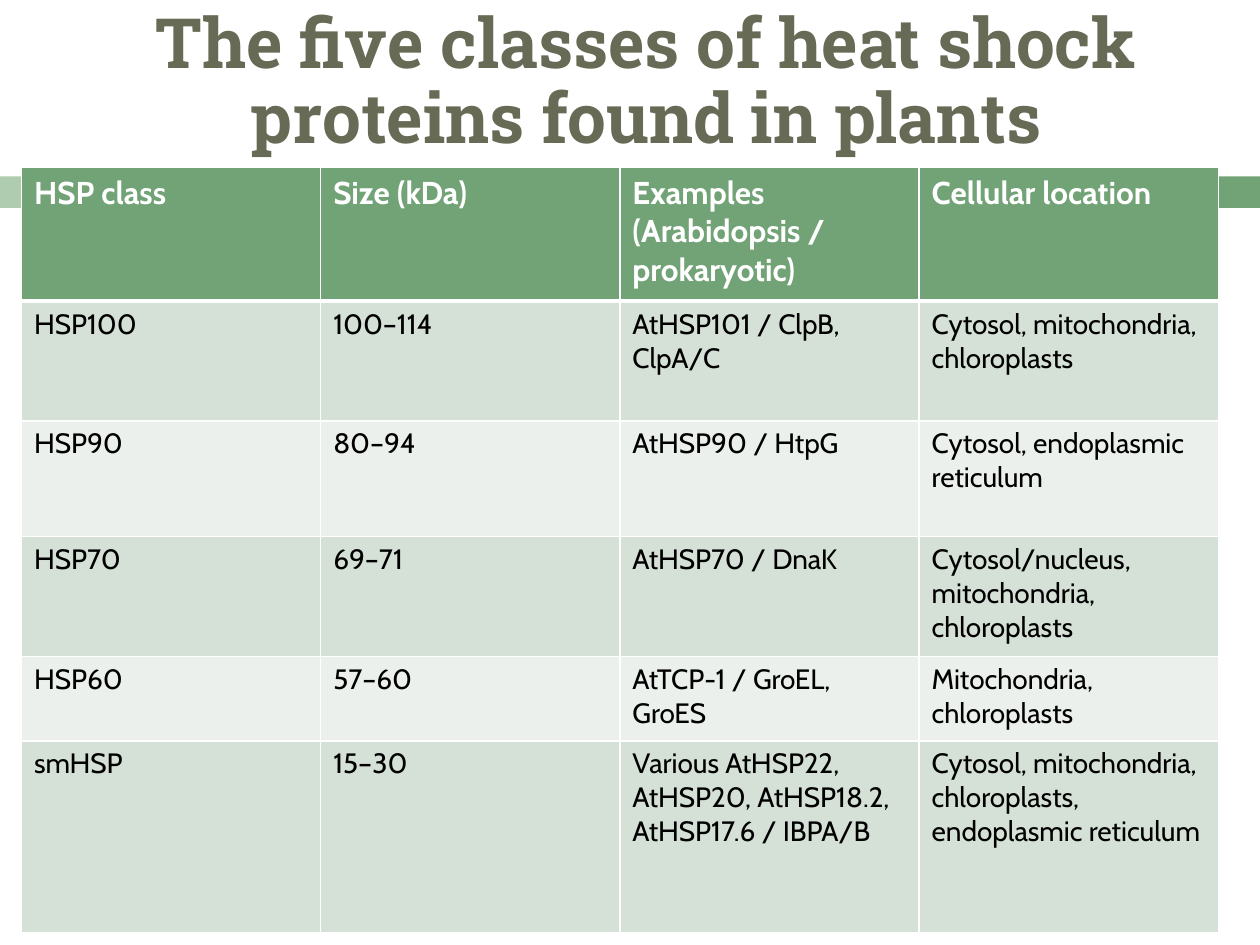
from dataclasses import dataclass

from lxml import etree
from pptx import Presentation
from pptx.dml.color import RGBColor
from pptx.enum.shapes import MSO_SHAPE
from pptx.enum.text import MSO_ANCHOR, MSO_AUTO_SIZE, PP_ALIGN
from pptx.oxml.ns import qn
from pptx.util import Inches, Pt

RECTANGLE = MSO_SHAPE.RECTANGLE
MIDDLE = MSO_ANCHOR.MIDDLE
NO_AUTOFIT = MSO_AUTO_SIZE.NONE
CENTER = PP_ALIGN.CENTER
TITLE_ONLY = 5


@dataclass(frozen=True)
class Theme:
    """Colours, fonts and type sizes of the slide."""

    title: str = "676A55"
    green: str = "72A376"
    light_green: str = "B0CCB0"
    bands: tuple = ("D5E0D6", "EBF0EC")
    white: str = "FFFFFF"
    black: str = "000000"
    title_font: str = "Roboto Slab"
    body_font: str = "Cabin"
    title_size: float = 39.6
    header_size: float = 18
    body_size: float = 16


THEME = Theme()
HEADINGS = ("HSP class", "Size (kDa)", "Examples (Arabidopsis / prokaryotic)",
            "Cellular location")
PROTEINS = (
    ("HSP100", "100–114", "AtHSP101 / ClpB, ClpA/C",
     "Cytosol, mitochondria, chloroplasts"),
    ("HSP90", "80–94", "AtHSP90 / HtpG", "Cytosol, endoplasmic reticulum"),
    ("HSP70", "69–71", "AtHSP70 / DnaK",
     "Cytosol/nucleus, mitochondria, chloroplasts"),
    ("HSP60", "57–60", "AtTCP-1 / GroEL, GroES", "Mitochondria, chloroplasts"),
    ("smHSP", "15–30", "Various AtHSP22, AtHSP20, AtHSP18.2, AtHSP17.6 / IBPA/B",
     "Cytosol, mitochondria, chloroplasts, endoplasmic reticulum"),
)
ROW_HEIGHTS = (1.06, 0.95, 0.92, 0.95, 0.67, 1.52)


def apply_format(target, values):
    """Set every attribute named in values on target."""
    for name, value in values.items():
        setattr(target, name, value)


def format_font(font, face, size, color, bold):
    """Give a font its face, size, colour and weight."""
    apply_format(font, {"name": face, "size": Pt(size), "bold": bold})
    font.color.rgb = RGBColor.from_string(color)


def add_title(slide, wording):
    """Place and format the title placeholder."""
    title = slide.shapes.title
    apply_format(title, {"left": Inches(0.67), "top": Inches(0),
                         "width": Inches(8.92), "height": Inches(1.33)})
    frame = title.text_frame
    frame.text = wording
    apply_format(frame, {"word_wrap": True, "auto_size": NO_AUTOFIT,
                         "vertical_anchor": MIDDLE})
    heading = frame.paragraphs[0]
    apply_format(heading, {"alignment": CENTER, "line_spacing": 0.9})
    format_font(heading.runs[0].font, THEME.title_font, THEME.title_size,
                THEME.title, True)


def add_bar(slide, left, width, color):
    """Add one part of the decorative band."""
    bar = slide.shapes.add_shape(RECTANGLE, Inches(left), Inches(1.4),
                                 Inches(width), Inches(0.25))
    bar.shadow.inherit = False
    bar.fill.solid()
    bar.fill.fore_color.rgb = RGBColor.from_string(color)
    bar.line.fill.background()


def add_borders(cell, widths):
    """Draw white cell borders with the given width in points per side."""
    properties = cell._tc.get_or_add_tcPr()
    for side, width in widths.items():
        line = etree.SubElement(properties, qn(f"a:ln{side}"), w=str(Pt(width)))
        fill = etree.SubElement(line, qn("a:solidFill"))
        etree.SubElement(fill, qn("a:srgbClr"), val=THEME.white)


def fill_cell(cell, wording, row):
    """Write a cell and style it as heading or banded body."""
    is_header = row == 0
    rule = 3 if is_header else 1
    add_borders(cell, {"L": 1, "R": 1, "T": 3 if row == 1 else 1, "B": rule})
    cell.fill.solid()
    background = THEME.green if is_header else THEME.bands[(row - 1) % 2]
    cell.fill.fore_color.rgb = RGBColor.from_string(background)
    cell.text = wording
    format_font(cell.text_frame.paragraphs[0].runs[0].font, THEME.body_font,
                THEME.header_size if is_header else THEME.body_size,
                THEME.white if is_header else THEME.black, is_header)


def add_protein_table(slide):
    """Add the table of heat shock protein classes."""
    rows = (HEADINGS, *PROTEINS)
    table = slide.shapes.add_table(
        len(rows), len(HEADINGS), Inches(0.17), Inches(1.33),
        Inches(9.5), Inches(sum(ROW_HEIGHTS))).table
    for index, (height, wordings) in enumerate(zip(ROW_HEIGHTS, rows)):
        table.rows[index].height = Inches(height)
        for column, wording in enumerate(wordings):
            fill_cell(table.cell(index, column), wording, index)


def main():
    """Build and save the slide."""
    deck = Presentation()
    apply_format(deck, {"slide_width": Inches(10), "slide_height": Inches(7.5)})
    slide = deck.slides.add_slide(deck.slide_layouts[TITLE_ONLY])
    add_bar(slide, 0, 0.58, THEME.light_green)
    add_bar(slide, 0.65, 9.35, THEME.green)
    add_title(slide, "The five classes of heat shock proteins found in plants")
    add_protein_table(slide)
    deck.save("out.pptx")


if __name__ == "__main__":
    main()
